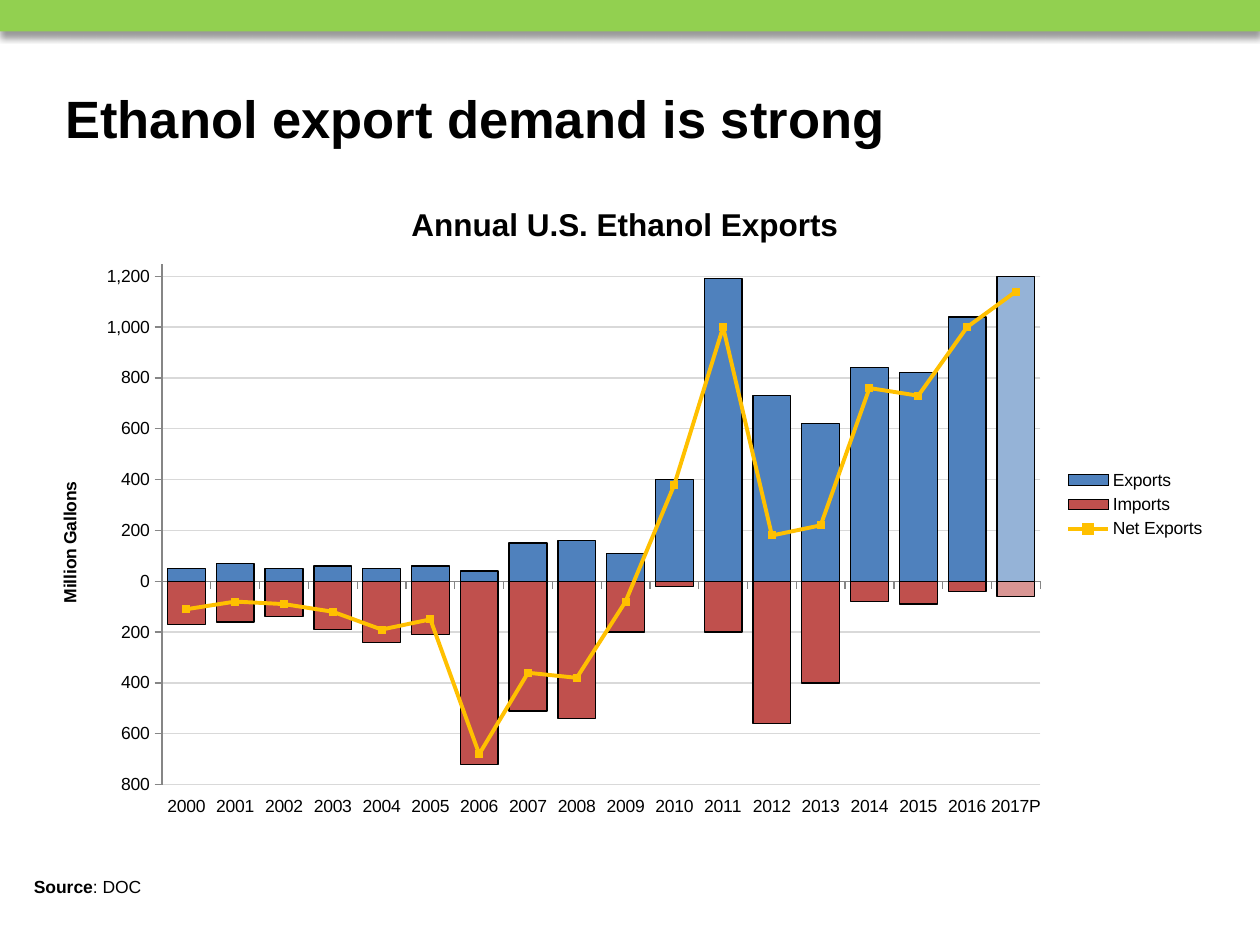
from dataclasses import dataclass
from typing import NamedTuple, Optional

from pptx import Presentation
from pptx.chart.data import CategoryChartData
from pptx.dml.color import RGBColor
from pptx.enum.chart import (XL_CHART_TYPE as ChartType, XL_LEGEND_POSITION as LegendPos,
                             XL_MARKER_STYLE as Marker, XL_TICK_LABEL_POSITION as LabelPos,
                             XL_TICK_MARK as Tick)
from pptx.enum.shapes import MSO_SHAPE as Shape
from pptx.enum.text import MSO_ANCHOR as Anchor, MSO_AUTO_SIZE as AutoSize, PP_ALIGN as Align
from pptx.oxml import parse_xml
from pptx.oxml.ns import nsdecls, qn
from pptx.util import Inches, Pt


@dataclass(frozen=True)
class Theme:
    font: str = "Arial"
    title: int = 30
    chart_title: int = 18
    small: int = 10
    text: str = "000000"
    band: str = "92D050"
    grid: str = "D9D9D9"
    axis: str = "868686"
    outline: float = 0.75
    net_line: float = 2.25
    marker: int = 4


class Box(NamedTuple):
    """Left, top, width and height in grid cells of a tenth of an inch."""
    col: float
    row: float
    cols: float
    rows: float

    def emu(self) -> list:
        return [Inches(v / 10) for v in self]


class Series(NamedTuple):
    name: str
    values: list
    color: str
    projected: Optional[str] = None


THEME = Theme()
YEARS = [str(y) for y in range(2000, 2017)] + ["2017P"]
EXPORTS = Series("Exports", [50, 70, 50, 60, 50, 60, 40, 150, 160, 110, 400, 1190,
                             730, 620, 840, 820, 1040, 1200], "4F81BD", "95B3D7")
IMPORTS = Series("Imports", [-170, -160, -140, -190, -240, -210, -720, -510, -540, -200,
                             -20, -200, -560, -400, -80, -90, -40, -60], "C0504D", "D99694")
NET = Series("Net Exports", [-110, -80, -90, -120, -190, -150, -680, -360, -380, -80,
                             380, 1000, 180, 220, 760, 730, 1000, 1140], "FFC000")


def rgb(color: str) -> RGBColor:
    return RGBColor.from_string(color)


def style_line(line, color: str, width: float = THEME.outline) -> None:
    line.color.rgb = rgb(color)
    line.width = Pt(width)


def style_fill(fill, color: str) -> None:
    fill.solid()
    fill.fore_color.rgb = rgb(color)


def style_font(font, size: int, bold: bool = False) -> None:
    font.name, font.size, font.bold = THEME.font, Pt(size), bold
    font.color.rgb = rgb(THEME.text)


def add_run(p, text: str, size: int, bold: bool = False) -> None:
    r = p.add_run()
    r.text = text
    style_font(r.font, size, bold)


def add_band(slide, box: Box) -> None:
    sp = slide.shapes.add_shape(Shape.RECTANGLE, *box.emu())
    style_fill(sp.fill, THEME.band)
    sp.line.fill.background()
    sp.shadow.inherit = False
    effects = sp._element.spPr.find(qn("a:effectLst"))
    effects.append(parse_xml(
        f'<a:outerShdw {nsdecls("a")} blurRad="{Pt(4)}" dist="{Pt(3)}" dir="5400000" '
        'rotWithShape="0"><a:srgbClr val="000000"><a:alpha val="40000"/></a:srgbClr>'
        '</a:outerShdw>'))


def add_title(slide, box: Box, text: str) -> None:
    sp = slide.shapes.title
    sp.left, sp.top, sp.width, sp.height = box.emu()
    tf = sp.text_frame
    tf.auto_size, tf.vertical_anchor = AutoSize.NONE, Anchor.TOP
    tf.margin_top = Inches(0.1)
    p = tf.paragraphs[0]
    p.alignment = Align.LEFT
    add_run(p, text, THEME.title, True)


def add_source(slide, box: Box, source: str) -> None:
    tf = slide.shapes.add_textbox(*box.emu()).text_frame
    tf.word_wrap, tf.auto_size = True, AutoSize.SHAPE_TO_FIT_TEXT
    p = tf.paragraphs[0]
    add_run(p, "Source", THEME.small, True)
    add_run(p, f": {source}", THEME.small)


def set_layout(parent, after: Optional[str], inner: bool = False, **shares: float) -> None:
    """Place a chart part by shares of the chart's size, following child `after`."""
    for old in parent.findall(qn("c:layout")):
        parent.remove(old)
    target = '<c:layoutTarget val="inner"/>' if inner else ""
    modes = "".join(f'<c:{k}Mode val="edge"/>' for k in "xy")
    places = "".join(f'<c:{k} val="{v}"/>' for k, v in shares.items())
    layout = parse_xml(f'<c:layout {nsdecls("c")}><c:manualLayout>{target}{modes}{places}'
                       '</c:manualLayout></c:layout>')
    if after:
        parent.find(qn(after)).addnext(layout)
    else:
        parent.insert(0, layout)


def move_last_to_line(plot_area) -> None:
    """Turn the last column series into a line on the same axes."""
    bars = plot_area.find(qn("c:barChart"))
    ser = bars.findall(qn("c:ser"))[-1]
    for flag in ser.findall(qn("c:invertIfNegative")):
        ser.remove(flag)
    axes = "".join(f'<c:axId val="{a.get("val")}"/>' for a in bars.findall(qn("c:axId")))
    line = parse_xml(f'<c:lineChart {nsdecls("c")}><c:grouping val="standard"/>'
                     f'<c:varyColors val="0"/><c:marker val="1"/>{axes}</c:lineChart>')
    line.insert(2, ser)
    bars.addnext(line)


def style_columns(ser, data: Series) -> None:
    ser.invert_if_negative = False
    last = ser.points[len(YEARS) - 1]
    for part, color in ((ser, data.color), (last, data.projected)):
        style_fill(part.format.fill, color)
        style_line(part.format.line, THEME.text)


def style_net(ser, data: Series) -> None:
    ser.smooth = False
    style_line(ser.format.line, data.color, THEME.net_line)
    ser.marker.style, ser.marker.size = Marker.SQUARE, THEME.marker
    style_fill(ser.marker.format.fill, data.color)
    style_line(ser.marker.format.line, data.color)


def style_axes(chart) -> None:
    cat, val = chart.category_axis, chart.value_axis
    for axis in (cat, val):
        axis.major_tick_mark, axis.minor_tick_mark = Tick.OUTSIDE, Tick.NONE
        style_line(axis.format.line, THEME.axis)
        style_font(axis.tick_labels.font, THEME.small)
    cat.tick_label_position = LabelPos.LOW
    cat.has_major_gridlines = False
    val.minimum_scale, val.maximum_scale, val.major_unit = -800, 1250, 200
    val.tick_labels.number_format = "#,##0;[Black]#,##0"
    val.tick_labels.number_format_is_linked = False
    val.has_major_gridlines = True
    style_line(val.major_gridlines.format.line, THEME.grid)
    add_run(val.axis_title.text_frame.paragraphs[0], "Million Gallons", THEME.small, True)


def add_trade_chart(slide, box: Box) -> None:
    data = CategoryChartData()
    data.categories = YEARS
    for s in (EXPORTS, IMPORTS, NET):
        data.add_series(s.name, s.values)
    chart = slide.shapes.add_chart(ChartType.COLUMN_CLUSTERED, *box.emu(), data).chart
    style_font(chart.font, THEME.small)
    chart.has_title = True
    add_run(chart.chart_title.text_frame.paragraphs[0], "Annual U.S. Ethanol Exports",
            THEME.chart_title, True)
    style_axes(chart)
    chart.has_legend = True
    chart.legend.position, chart.legend.include_in_layout = LegendPos.RIGHT, False
    style_font(chart.legend.font, THEME.small)

    plot_area = chart._chartSpace.chart.plotArea
    move_last_to_line(plot_area)
    columns, net = chart.plots
    columns.gap_width, columns.overlap, columns.vary_by_categories = 29, 100, False
    for ser, s in zip(columns.series, (EXPORTS, IMPORTS)):
        style_columns(ser, s)
    style_net(net.series[0], NET)

    set_layout(plot_area, None, inner=True, x=0.11, y=0.13, w=0.74, h=0.8)
    set_layout(chart.value_axis.axis_title._element, "c:tx", x=0.02, y=0.46)
    set_layout(chart.legend._element, "c:legendPos", x=0.87, y=0.44, w=0.12, h=0.12)


def main() -> None:
    prs = Presentation()
    prs.slide_width, prs.slide_height = Inches(10), Inches(7.5)
    slide = prs.slides.add_slide(prs.slide_layouts[5])
    add_band(slide, Box(0, 0, 100, 2.5))
    add_trade_chart(slide, Box(2.5, 14.2, 94.2, 51.7))
    add_title(slide, Box(4.2, 5.8, 90, 9.2), "Ethanol export demand is strong")
    add_source(slide, Box(1.7, 69, 62.5, 2.7), "DOC")
    prs.save("out.pptx")


if __name__ == "__main__":
    main()
